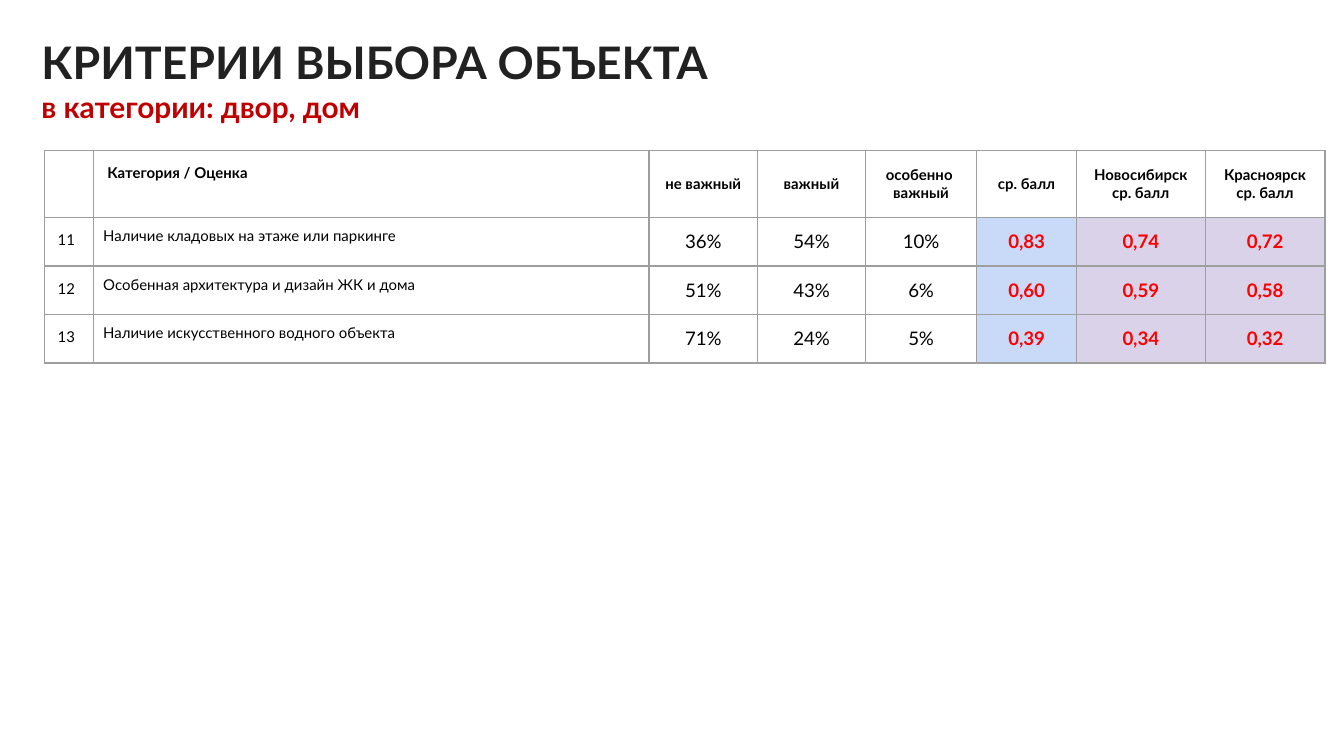
from lxml import etree
from pptx import Presentation
from pptx.dml.color import RGBColor
from pptx.enum import text
from pptx.oxml import ns
from pptx.util import Pt

DARK = RGBColor(0x21, 0x21, 0x21)
CRIMSON = RGBColor(0xC0, 0x00, 0x00)
BLACK = RGBColor(0x00, 0x00, 0x00)
RED = RGBColor(0xFF, 0x00, 0x00)
GREY = RGBColor(0x9E, 0x9E, 0x9E)
BLUE = RGBColor(0xC9, 0xDA, 0xF8)
LILAC = RGBColor(0xD9, 0xD2, 0xE9)


def add_run(para, words, size, color, bold):
    run = para.add_run()
    run.text = words
    font = run.font
    font.name, font.size, font.bold = "Lato", Pt(size), bold
    font.color.rgb = color


def add_edges(cell):
    props = cell._tc.get_or_add_tcPr()
    for i, side in enumerate(("lnL", "lnR", "lnT", "lnB")):
        line = etree.Element(ns.qn("a:" + side), w=str(Pt(0.75)))
        fill = etree.SubElement(line, ns.qn("a:solidFill"))
        etree.SubElement(fill, ns.qn("a:srgbClr"), val=str(GREY))
        props.insert(i, line)


deck = Presentation()
deck.slide_width, deck.slide_height = Pt(720), Pt(405)
slide = deck.slides.add_slide(deck.slide_layouts[6])

# Title and subtitle
box = slide.shapes.add_textbox(Pt(15.1), Pt(11.5), Pt(656), Pt(51.8))
frame = box.text_frame
frame.word_wrap = True
frame.margin_left = frame.margin_right = Pt(7.2)
frame.margin_top = frame.margin_bottom = Pt(7.2)
add_run(frame.paragraphs[0], "КРИТЕРИИ ВЫБОРА ОБЪЕКТА", 24, DARK, True)
add_run(frame.add_paragraph(), "в категории: двор, дом", 16, CRIMSON, True)

# Table content
rows = [
    ["", "Категория / Оценка", "не важный", "важный", "особенно \nважный",
     "ср. балл", "Новосибирск\nср. балл", "Красноярск\nср. балл"],
    ["11", "Наличие кладовых на этаже или паркинге",
     "36%", "54%", "10%", "0,83", "0,74", "0,72"],
    ["12", "Особенная архитектура и дизайн ЖК и дома",
     "51%", "43%", "6%", "0,60", "0,59", "0,58"],
    ["13", "Наличие искусственного водного объекта",
     "71%", "24%", "5%", "0,39", "0,34", "0,32"],
]
widths = [26.6, 297.4, 58.3, 57.6, 59.8, 53.3, 69.1, 64.1]
heights = [36, 26, 26, 26]
SCORE = 5  # first column of average scores

# Table grid
grid = slide.shapes.add_table(len(rows), len(widths), Pt(23.7), Pt(80.5),
                              Pt(sum(widths)), Pt(sum(heights))).table
grid.first_row = grid.horz_banding = False
for col, width in zip(grid.columns, widths):
    col.width = Pt(width)
for row, height in zip(grid.rows, heights):
    row.height = Pt(height)

# Table cells
for r, row in enumerate(rows):
    for c, words in enumerate(row):
        cell = grid.cell(r, c)
        head, score = r == 0, r > 0 and c >= SCORE
        pad = Pt(7.2 if head or c == 0 else 5)
        cell.margin_left = cell.margin_right = pad
        cell.margin_top = cell.margin_bottom = pad
        if score:
            cell.fill.solid()
            cell.fill.fore_color.rgb = BLUE if c == SCORE else LILAC
        else:
            cell.fill.background()
        add_edges(cell)
        if c > 1:
            cell.vertical_anchor = text.MSO_ANCHOR.MIDDLE
        if not words:
            continue
        for i, part in enumerate(words.split("\n")):
            frame = cell.text_frame
            para = frame.add_paragraph() if i else frame.paragraphs[0]
            if c > 1:
                para.alignment = text.PP_ALIGN.CENTER
            add_run(para, part, 8 if head or c < 2 else 10,
                    RED if score else BLACK, head or score)

deck.save("out.pptx")
